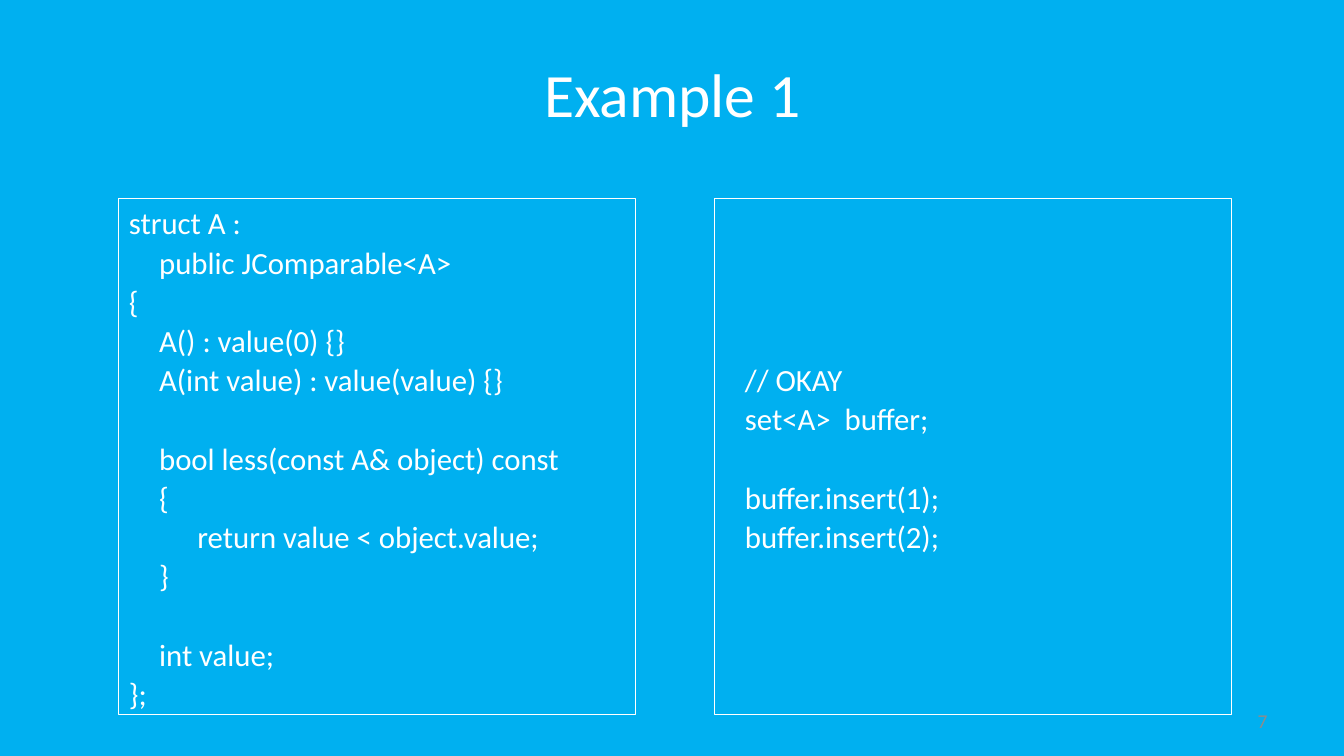
from pptx import Presentation, util as u
from pptx.dml import color
from pptx.enum import shapes, text

FONT = "Calibri"
WHITE = "FFFFFF"
SIDE = 5.12
TOP = 1.97
LEAD = 28

STRUCT = [
    (0, 0, "struct A :"),
    (0.3, 0, "public JComparable<A>"),
    (0, 0, "{"),
    (0.3, 0, "A() : value(0) {}"),
    (0.3, 0, "A(int value) : value(value) {}"),
    (0.3, 1, "bool less(const A& object) const"),
    (0.3, 0, "{"),
    (0.68, 0, "return value < object.value;"),
    (0.3, 0, "}"),
    (0.3, 1, "int value;"),
    (0, 0, "};"),
]
USAGE = [
    (0.2, 0, "// OKAY"),
    (0.2, 0, "set<A>  buffer;"),
    (0.2, 1, "buffer.insert(1);"),
    (0.2, 0, "buffer.insert(2);"),
]


def rgb(code):
    return color.RGBColor.from_string(code)


def style(para, size, code, align):
    para.alignment = align
    for run in para.runs:
        run.font.name = FONT
        run.font.size = u.Pt(size)
        run.font.color.rgb = rgb(code)


def label(slide, box, words, size, code, align):
    frame = slide.shapes.add_textbox(*map(u.Inches, box)).text_frame
    frame.word_wrap = True
    frame.vertical_anchor = text.MSO_ANCHOR.MIDDLE
    frame.text = words
    style(frame.paragraphs[0], size, code, align)


def panel(slide, box, lines):
    shape = slide.shapes.add_shape(
        shapes.MSO_SHAPE.RECTANGLE, *map(u.Inches, box))
    shape.shadow.inherit = False
    shape.fill.background()
    shape.line.color.rgb = rgb(WHITE)
    shape.line.width = u.Pt(0.75)
    frame = shape.text_frame
    frame.word_wrap = True
    frame.vertical_anchor = text.MSO_ANCHOR.MIDDLE
    frame.text = "\n".join(words for _, _, words in lines)
    for para, (indent, gap, _) in zip(frame.paragraphs, lines):
        style(para, 22, WHITE, text.PP_ALIGN.LEFT)
        para.line_spacing = u.Pt(LEAD)
        para.space_before = u.Pt(gap * LEAD)
        para._p.get_or_add_pPr().set("marL", str(u.Inches(indent)))


def main():
    deck = Presentation()
    deck.slide_width = u.Inches(13.33)
    deck.slide_height = u.Inches(7.5)
    slide = deck.slides.add_slide(deck.slide_layouts[6])
    back = slide.background.fill
    back.solid()
    back.fore_color.rgb = rgb("00B0F0")
    label(slide, (0.67, 0.3, 12, 1.25), "Example 1", 44, WHITE,
          text.PP_ALIGN.CENTER)
    label(slide, (9.56, 6.95, 3.11, 0.4), "7", 14, "8C8C8C",
          text.PP_ALIGN.RIGHT)
    for left, lines in ((1.18, STRUCT), (7.09, USAGE)):
        panel(slide, (left, TOP, SIDE, SIDE), lines)
    deck.save("out.pptx")


if __name__ == "__main__":
    main()
